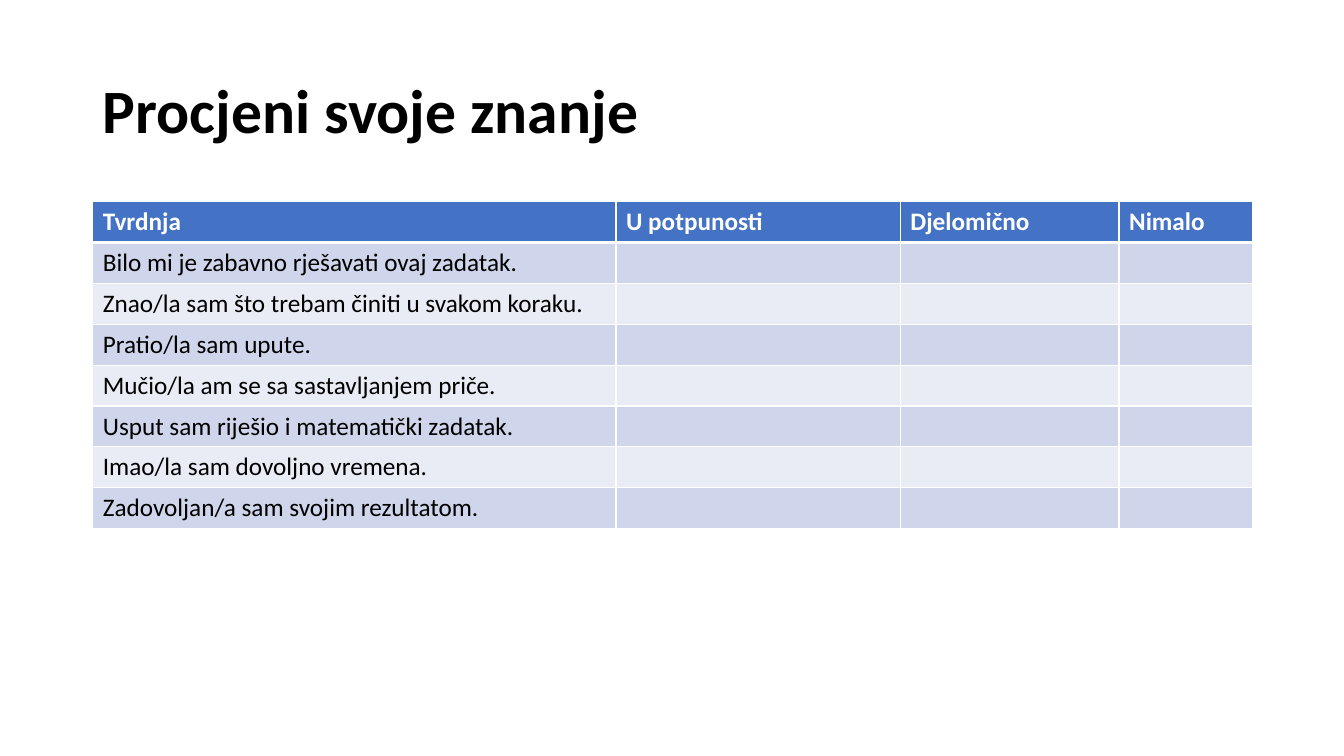
from lxml.etree import SubElement
from pptx import Presentation
from pptx.dml.color import RGBColor
from pptx.enum.text import MSO_ANCHOR, PP_ALIGN
from pptx.oxml.ns import qn
from pptx.util import Inches, Pt

HEADINGS = ["Tvrdnja", "U potpunosti", "Djelomično", "Nimalo"]
STATEMENTS = [
    "Bilo mi je zabavno rješavati ovaj zadatak.",
    "Znao/la sam što trebam činiti u svakom koraku.",
    "Pratio/la sam upute.",
    "Mučio/la am se sa sastavljanjem priče.",
    "Usput sam riješio i matematički zadatak.",
    "Imao/la sam dovoljno vremena.",
    "Zadovoljan/a sam svojim rezultatom.",
]
COLUMN_WIDTHS = [5.19, 2.82, 2.17, 1.32]
LEFT, WIDTH = 0.92, 11.5
ROW_HEIGHT = 0.405


def color(hex_value):
    return RGBColor.from_string(hex_value)


class SelfAssessmentSlide:
    FONT = "Calibri"
    TEXT, LINE, HEADER = "000000", "FFFFFF", "4472C4"
    BANDS = ["CFD5EA", "E9EBF5"]

    def __init__(self, presentation):
        self.slide = presentation.slides.add_slide(presentation.slide_layouts[5])

    def style(self, paragraph, size, hex_value, bold):
        font = paragraph.font
        font.name, font.size, font.bold = self.FONT, Pt(size), bold
        font.color.rgb = color(hex_value)
        paragraph.alignment = PP_ALIGN.LEFT

    def title(self, text, top, height):
        title = self.slide.shapes.title
        title.left, title.top = Inches(LEFT), Inches(top)
        title.width, title.height = Inches(WIDTH), Inches(height)
        title.text_frame.text = text
        title.text_frame.vertical_anchor = MSO_ANCHOR.MIDDLE
        heading = title.text_frame.paragraphs[0]
        heading.line_spacing = 0.9
        self.style(heading, 44, self.TEXT, True)

    def borders(self, cell, top, bottom):
        """Draw the four cell edges; top and bottom are widths in points."""
        properties = cell._tc.get_or_add_tcPr()
        for edge, width in zip(("L", "R", "T", "B"), (1, 1, top, bottom)):
            line = SubElement(properties, qn(f"a:ln{edge}"), w=str(Pt(width)))
            fill = SubElement(line, qn("a:solidFill"))
            SubElement(fill, qn("a:srgbClr"), val=self.LINE)

    def table(self, rows, top):
        """Add a table with a header row and alternating bands below it."""
        table = self.slide.shapes.add_table(
            len(rows), len(COLUMN_WIDTHS), Inches(LEFT), Inches(top),
            Inches(WIDTH), Inches(ROW_HEIGHT * len(rows))).table
        for column, width in zip(table.columns, COLUMN_WIDTHS):
            column.width = Inches(width)
        for r, row in enumerate(rows):
            is_header = r == 0
            table.rows[r].height = Inches(ROW_HEIGHT)
            for c, text in enumerate(row):
                cell = table.cell(r, c)
                self.borders(cell, 3 if r == 1 else 1, 3 if is_header else 1)
                cell.fill.solid()
                cell.fill.fore_color.rgb = color(
                    self.HEADER if is_header else self.BANDS[(r - 1) % 2])
                if text:
                    cell.text = text
                self.style(cell.text_frame.paragraphs[0], 18,
                           self.LINE if is_header else self.TEXT, is_header)


def main():
    presentation = Presentation()
    presentation.slide_width = Inches(13.33)
    presentation.slide_height = Inches(7.5)
    assessment = SelfAssessmentSlide(presentation)
    assessment.title("Procjeni svoje znanje", 0.4, 1.45)
    answers = [""] * (len(HEADINGS) - 1)
    assessment.table([HEADINGS] + [[s] + answers for s in STATEMENTS], 2)
    presentation.save("out.pptx")


if __name__ == "__main__":
    main()
